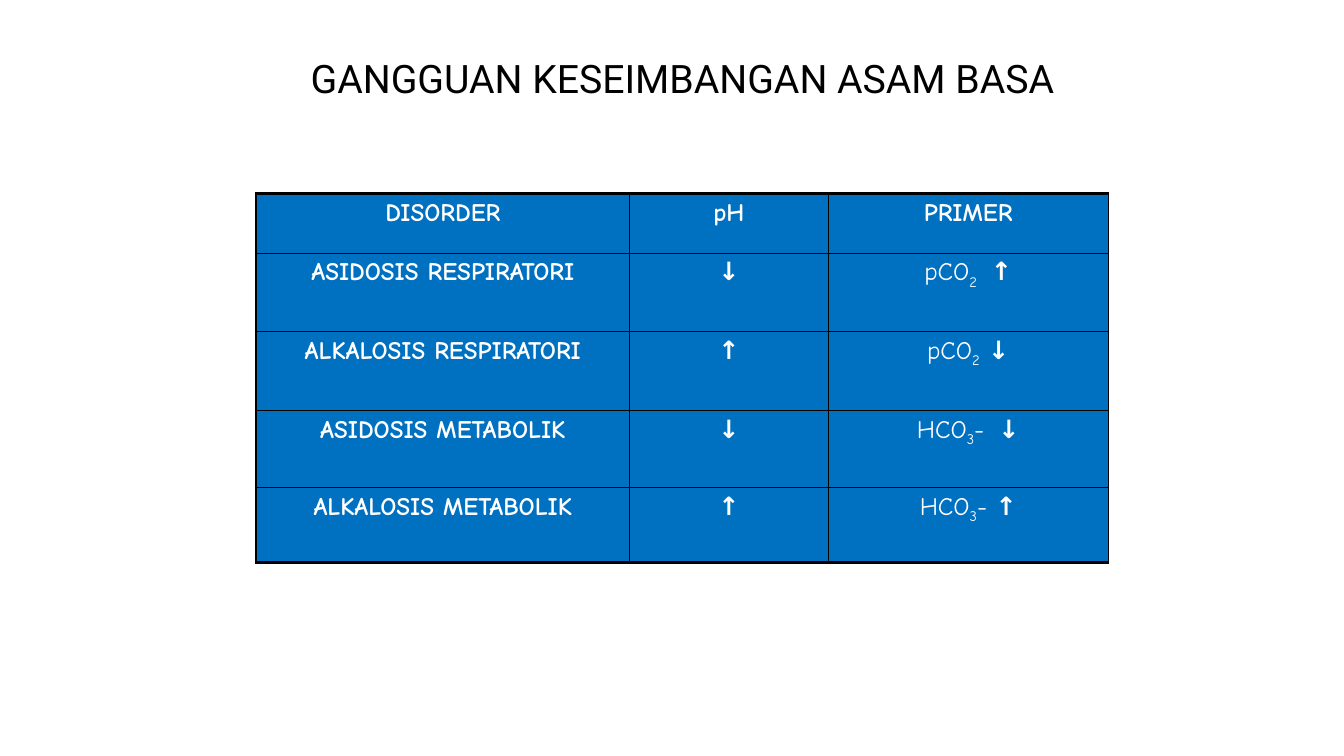
import dataclasses

import pptx
import pptx.dml.color
import pptx.enum.text
import pptx.oxml
import pptx.oxml.ns
import pptx.util

Cm = pptx.util.Cm
Pt = pptx.util.Pt


@dataclasses.dataclass(frozen=True)
class Theme:
    """Colours, fonts and sizes of the slide."""

    ink: str = "000000"
    cell: str = "0070C0"
    cell_text: str = "FFFFFF"
    title_font: str = "Roboto"
    table_font: str = "Comic Neue"
    title_size: int = 28
    table_size: int = 18
    thin: float = 1
    thick: float = 2.25
    subscript: int = -25000
    wide_gap: int = 400


THEME = Theme()
TITLE = "GANGGUAN KESEIMBANGAN ASAM BASA"
HEADINGS = ("DISORDER", "pH", "PRIMER")
DISORDERS = (
    ("ASIDOSIS RESPIRATORI", "↓", ("pCO", "2", "", "↑", True)),
    ("ALKALOSIS RESPIRATORI", "↑", ("pCO", "2", "", "↓", False)),
    ("ASIDOSIS METABOLIK", "↓", ("HCO", "3", "-", "↓", True)),
    ("ALKALOSIS METABOLIK", "↑", ("HCO", "3", "-", "↑", False)),
)
COLUMN_WIDTHS = (9.42, 5, 7.06)
ROW_HEIGHTS = (1.5, 1.98, 1.98, 1.94, 1.9)


def style_run(run, font_name, size, color, bold=False):
    """Set the font of one run."""
    run.font.name = font_name
    run.font.size = Pt(size)
    run.font.bold = bold
    run.font.color.rgb = pptx.dml.color.RGBColor.from_string(color)


def add_title(slide, left, top, width, height):
    """Place the centred title in its box."""
    text_frame = slide.shapes.add_textbox(left, top, width, height).text_frame
    text_frame.word_wrap = True
    text_frame.text = TITLE
    paragraph = text_frame.paragraphs[0]
    paragraph.alignment = pptx.enum.text.PP_ALIGN.CENTER
    style_run(paragraph.runs[0], THEME.title_font, THEME.title_size, THEME.ink)


def style_cell(cell, borders):
    """Give a cell its border widths by side and its fill."""
    properties = cell._tc.get_or_add_tcPr()
    for side, width in borders.items():
        properties.append(pptx.oxml.parse_xml(
            f'<a:ln{side} {pptx.oxml.ns.nsdecls("a")} w="{Pt(width)}">'
            f'<a:solidFill><a:srgbClr val="{THEME.ink}"/></a:solidFill></a:ln{side}>'))
    cell.fill.solid()
    cell.fill.fore_color.rgb = pptx.dml.color.RGBColor.from_string(THEME.cell)


def write_label(paragraph, label):
    """Write a bold label."""
    paragraph.text = label
    style_run(paragraph.runs[0], THEME.table_font, THEME.table_size, THEME.cell_text, True)


def write_primary(paragraph, primary):
    """Write a formula with its subscript, followed by a bold arrow."""
    base, index, charge, arrow, is_wide = primary
    parts = (
        (base, {}),
        (index, {"baseline": THEME.subscript}),
        (charge, {}),
        (" ", {"spc": THEME.wide_gap} if is_wide else {}),
        (arrow, {}),
    )
    for text, attributes in parts:
        if text:
            run = paragraph.add_run()
            run.text = text
            style_run(run, THEME.table_font, THEME.table_size, THEME.cell_text, text == arrow)
            for name, value in attributes.items():
                run._r.get_or_add_rPr().set(name, str(value))


def add_disorder_table(slide, left, top, width, height):
    """Place the table of disorders, sharing its box among columns and rows."""
    rows = (HEADINGS, *DISORDERS)
    table = slide.shapes.add_table(len(rows), len(HEADINGS), left, top, width, height).table
    table.first_row = False
    table.horz_banding = False
    for column, share in zip(table.columns, COLUMN_WIDTHS):
        column.width = int(width * share / sum(COLUMN_WIDTHS))
    for row, share in zip(table.rows, ROW_HEIGHTS):
        row.height = int(height * share / sum(ROW_HEIGHTS))
    for row_index, values in enumerate(rows):
        for column_index, value in enumerate(values):
            cell = table.cell(row_index, column_index)
            style_cell(cell, {
                "L": THEME.thick if column_index == 0 else THEME.thin,
                "R": THEME.thin,
                "T": THEME.thick if row_index == 0 else THEME.thin,
                "B": THEME.thick if row_index == len(rows) - 1 else THEME.thin,
            })
            paragraph = cell.text_frame.paragraphs[0]
            paragraph.alignment = pptx.enum.text.PP_ALIGN.CENTER
            write = write_label if isinstance(value, str) else write_primary
            write(paragraph, value)


def main():
    """Build and save the presentation."""
    presentation = pptx.Presentation()
    presentation.slide_width = Cm(33.87)
    presentation.slide_height = Cm(19.05)
    slide = presentation.slides.add_slide(presentation.slide_layouts[6])
    add_title(slide, Cm(6.4), Cm(1.24), Cm(21.59), Cm(3.18))
    add_disorder_table(slide, Cm(6.45), Cm(4.88), Cm(21.48), Cm(9.3))
    presentation.save("out.pptx")


if __name__ == "__main__":
    main()
